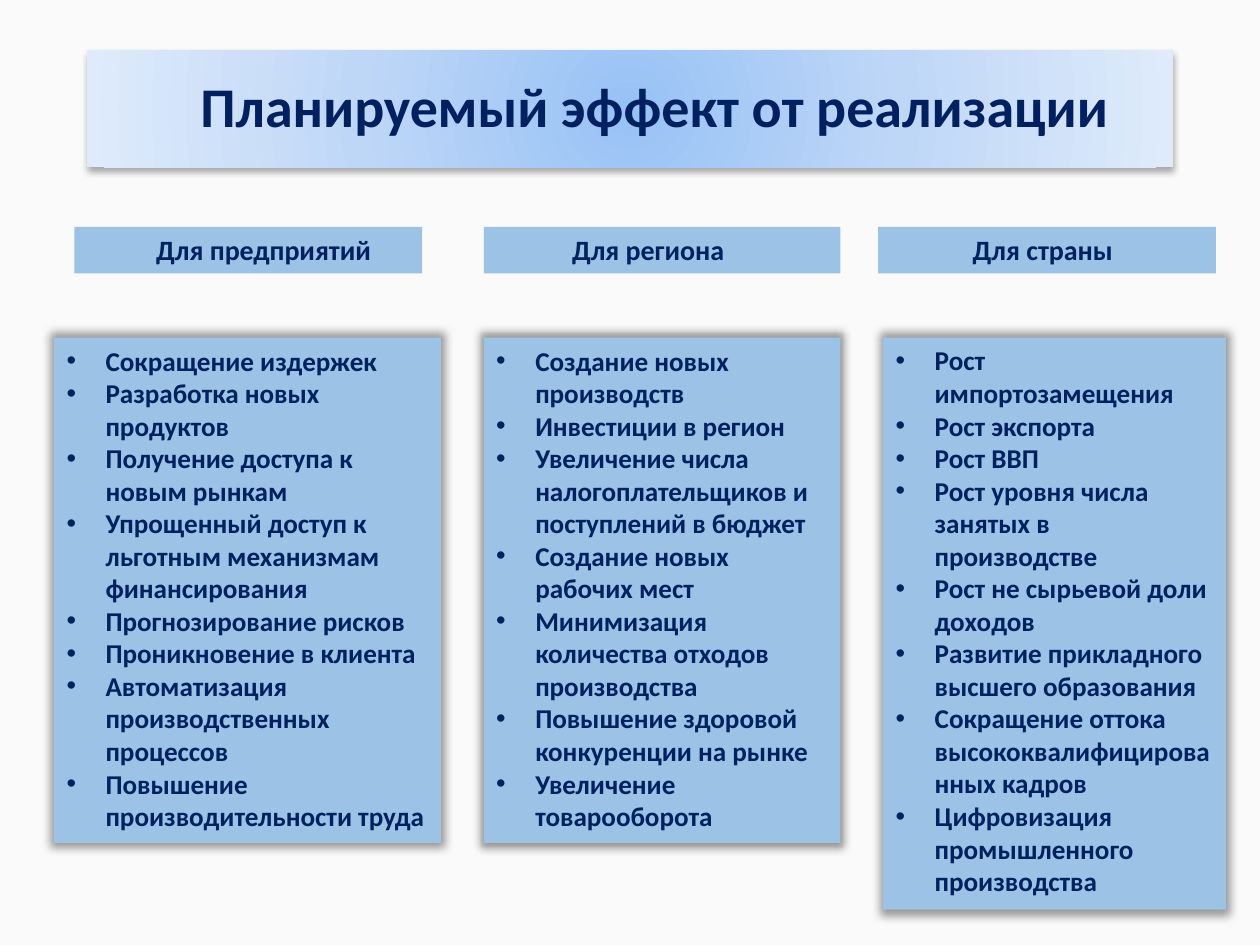
from lxml import etree
from pptx import Presentation
from pptx.dml.color import RGBColor
from pptx.enum.shapes import MSO_SHAPE
from pptx.enum.text import MSO_ANCHOR, MSO_AUTO_SIZE, PP_ALIGN
from pptx.oxml import parse_xml
from pptx.oxml.ns import nsdecls, qn
from pptx.util import Inches, Pt

COLORS = {
    "background": "FAFAFA",
    "panel": "9CC2E5",
    "text": "002060",
    "shadow": "000000",
}
TITLE_GRADIENT = [(0, "98C2F5"), (50, "BFD7F7"), (100, "DFEBFB")]
FONT = "Calibri"
COLUMNS, ROWS = 100, 75
CELL = Inches(10) / COLUMNS
BULLET_INDENT = 3.1
HEADER_TOP, HEADER_HEIGHT = 18, 3.7
LIST_TOP = 26.8

EFFECTS = [
    {
        "heading": "Для предприятий",
        "header": (5.9, 27.6),
        "indent": 5.5,
        "panel": (4.3, 30.7, 40.1),
        "items": [
            "Сокращение издержек",
            "Разработка новых продуктов",
            "Получение доступа к новым рынкам",
            "Упрощенный доступ к льготным механизмам финансирования",
            "Прогнозирование рисков",
            "Проникновение в клиента",
            "Автоматизация производственных процессов",
            "Повышение производительности труда",
        ],
    },
    {
        "heading": "Для региона",
        "header": (38.4, 28.3),
        "indent": 6,
        "panel": (38.4, 28.3, 40.1),
        "items": [
            "Создание новых производств",
            "Инвестиции в регион",
            "Увеличение числа налогоплательщиков и поступлений в бюджет",
            "Создание новых рабочих мест",
            "Минимизация количества отходов производства",
            "Повышение здоровой конкуренции на рынке",
            "Увеличение товарооборота",
        ],
    },
    {
        "heading": "Для страны",
        "header": (69.7, 26.8),
        "indent": 6.5,
        "panel": (70.1, 27.2, 45.4),
        "items": [
            "Рост импортозамещения",
            "Рост экспорта",
            "Рост ВВП",
            "Рост уровня числа занятых в производстве",
            "Рост не сырьевой доли доходов",
            "Развитие прикладного высшего образования",
            "Сокращение оттока высококвалифицированных кадров",
            "Цифровизация промышленного производства",
        ],
    },
]


def grid(cells):
    return round(cells * CELL)


def add_panel(slide, box):
    shape = slide.shapes.add_shape(MSO_SHAPE.RECTANGLE, *map(grid, box))
    shape.shadow.inherit = False
    shape.fill.solid()
    shape.fill.fore_color.rgb = RGBColor.from_string(COLORS["panel"])
    shape.line.fill.background()
    return shape


def add_shadow(shape, alpha, blur, distance=0, direction=0, scale=100):
    effects = shape._element.spPr.find(qn("a:effectLst"))
    shadow = etree.SubElement(
        effects, qn("a:outerShdw"), blurRad=str(Pt(blur)), dist=str(Pt(distance)),
        dir=str(direction * 60000), sx=str(scale * 1000), sy=str(scale * 1000),
        algn="ctr", rotWithShape="0")
    color = etree.SubElement(shadow, qn("a:srgbClr"), val=COLORS["shadow"])
    etree.SubElement(color, qn("a:alpha"), val=str(alpha * 1000))


def set_radial_fill(shape, stops):
    properties = shape._element.spPr
    stop_list = "".join(
        f'<a:gs pos="{position * 1000}"><a:srgbClr val="{color}"/></a:gs>'
        for position, color in stops)
    gradient = parse_xml(
        f'<a:gradFill {nsdecls("a")} rotWithShape="1"><a:gsLst>{stop_list}</a:gsLst>'
        '<a:path path="circle"><a:fillToRect l="50000" t="50000" r="50000" b="50000"/>'
        '</a:path></a:gradFill>')
    properties.replace(properties.find(qn("a:solidFill")), gradient)


def add_bullet(paragraph):
    properties = paragraph._p.get_or_add_pPr()
    properties.set("marL", str(grid(BULLET_INDENT)))
    properties.set("indent", str(-grid(BULLET_INDENT)))
    color = etree.SubElement(properties, qn("a:buClr"))
    etree.SubElement(color, qn("a:srgbClr"), val=COLORS["text"])
    etree.SubElement(properties, qn("a:buFont"), typeface="Arial")
    etree.SubElement(properties, qn("a:buChar"), char="•")


def write(shape, lines, size, indent=0, anchor=MSO_ANCHOR.TOP, spacing=None,
          bullets=False, grow=True):
    frame = shape.text_frame
    frame.word_wrap = True
    frame.auto_size = MSO_AUTO_SIZE.SHAPE_TO_FIT_TEXT if grow else MSO_AUTO_SIZE.NONE
    frame.vertical_anchor = anchor
    frame.margin_left = grid(1 + indent)
    frame.margin_right = grid(1)
    frame.margin_top = frame.margin_bottom = grid(0.5)
    for index, line in enumerate(lines):
        paragraph = frame.add_paragraph() if index else frame.paragraphs[0]
        paragraph.alignment = PP_ALIGN.LEFT
        if spacing:
            paragraph.line_spacing = spacing
        if bullets:
            add_bullet(paragraph)
        run = paragraph.add_run()
        run.text = line
        run.font.name = FONT
        run.font.size = Pt(size)
        run.font.bold = True
        run.font.color.rgb = RGBColor.from_string(COLORS["text"])


def add_title(slide, box, text):
    banner = add_panel(slide, box)
    set_radial_fill(banner, TITLE_GRADIENT)
    add_shadow(banner, alpha=32, blur=3.5, distance=2.2, direction=90)
    write(banner, [text], size=32, indent=8, anchor=MSO_ANCHOR.MIDDLE,
          spacing=0.9, grow=False)


def add_header(slide, box, text, indent):
    write(add_panel(slide, box), [text], size=16, indent=indent)


def add_list(slide, box, items):
    panel = add_panel(slide, box)
    add_shadow(panel, alpha=40, blur=5, scale=102)
    write(panel, items, size=15.5, bullets=True)


def main():
    presentation = Presentation()
    presentation.slide_width = grid(COLUMNS)
    presentation.slide_height = grid(ROWS)
    slide = presentation.slides.add_slide(presentation.slide_layouts[6])
    slide.background.fill.solid()
    slide.background.fill.fore_color.rgb = RGBColor.from_string(COLORS["background"])

    add_title(slide, (6.9, 4, 86.2, 9.3), "Планируемый эффект от реализации")
    for effect in EFFECTS:
        left, width, height = effect["panel"]
        add_list(slide, (left, LIST_TOP, width, height), effect["items"])
        left, width = effect["header"]
        add_header(slide, (left, HEADER_TOP, width, HEADER_HEIGHT),
                   effect["heading"], effect["indent"])
    presentation.save("out.pptx")


if __name__ == "__main__":
    main()
